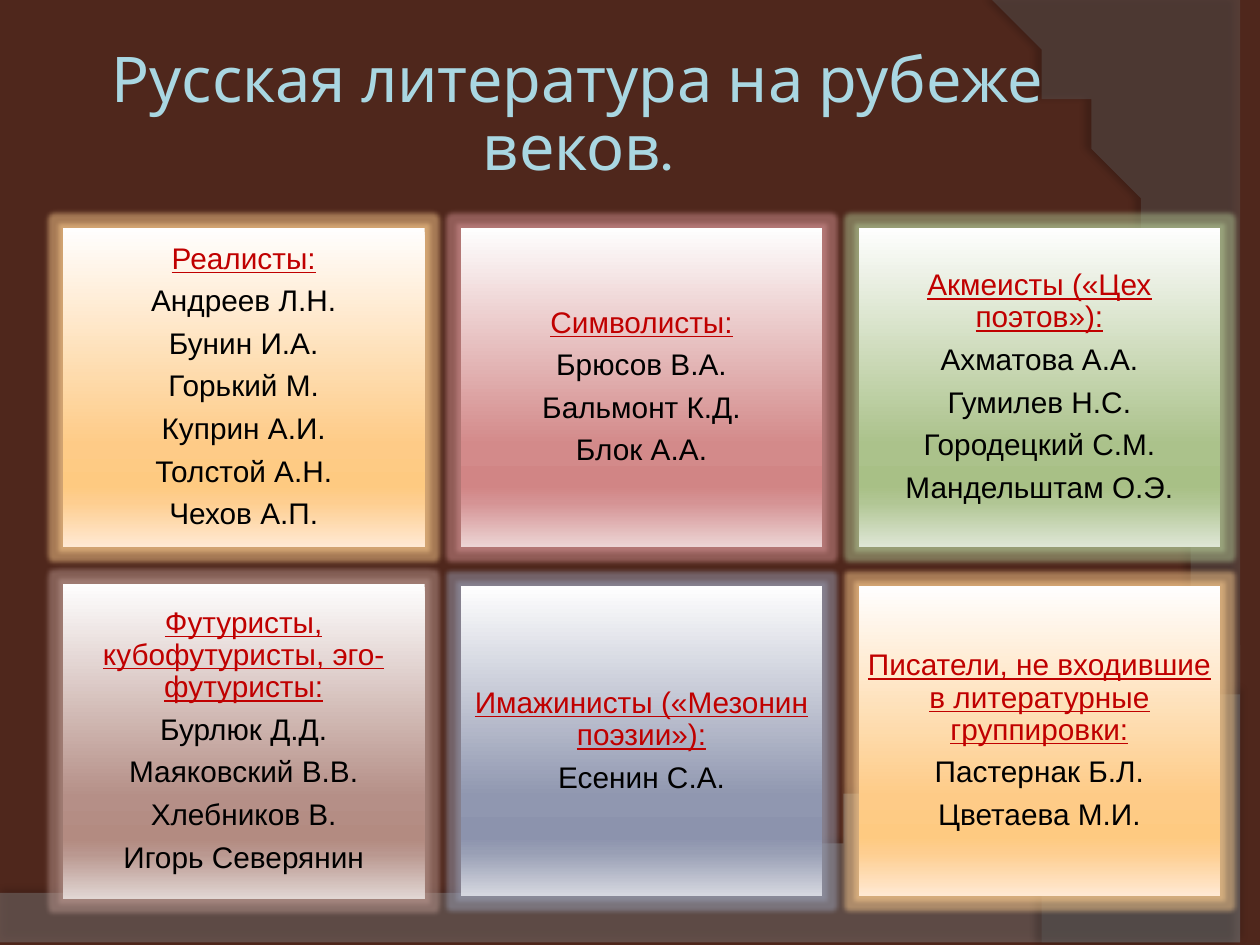
import pptx
import pptx.util
import pptx.oxml
import pptx.oxml.ns
import pptx.dml.color
import pptx.enum.shapes
import pptx.enum.text
from lxml import etree

Cm = pptx.util.Cm
Pt = pptx.util.Pt
RGBColor = pptx.dml.color.RGBColor
qn = pptx.oxml.ns.qn

BACKGROUND = RGBColor(0x4F, 0x27, 0x1C)
WAVE = RGBColor(0x7F, 0x7F, 0x7F)
SIDE = RGBColor(0x5E, 0x5E, 0x5E)
SHADOW = RGBColor(0, 0, 0)
TITLE = RGBColor(0xA9, 0xD7, 0xE2)
HEADING = RGBColor(0xC0, 0, 0)
NAME = RGBColor(0, 0, 0)

# Card gradients: one colour for each stop
STOPS = (0, 68, 81, 86, 100)


def shades(*codes):
    return [RGBColor.from_string(code) for code in codes]


ORANGE = shades("FFFEFE", "FECB87", "FECA81", "FECE90", "FFE9D3")
RED = shades("FEFEFE", "D38A8A", "D18585", "D59394", "ECD4D4")
GREEN = shades("FEFEFE", "ABC28B", "A8C086", "B1C694", "DEE6D5")
BROWN = shades("FEFEFE", "B58F87", "B38B81", "BA9890", "E1D6D3")
BLUE = shades("FEFEFE", "9097B0", "8C93AD", "999FB5", "D6D8E0")

# Grid in centimetres
LEFT, COLUMN_STEP, CARD_WIDTH = 1.27, 8.02, 7.29
ROW_CENTRES = (7.81, 14.94)

# Height, gradient, heading, names
CARDS = [
    (6.43, ORANGE, "Реалисты:",
     ["Андреев Л.Н.", "Бунин И.А.", "Горький М.", "Куприн А.И.",
      "Толстой А.Н.", "Чехов А.П."]),
    (6.43, RED, "Символисты:",
     ["Брюсов В.А.", "Бальмонт К.Д.", "Блок А.А."]),
    (6.43, GREEN, "Акмеисты («Цех поэтов»):",
     ["Ахматова А.А.", "Гумилев Н.С.", "Городецкий С.М.", "Мандельштам О.Э."]),
    (6.35, BROWN, "Футуристы, кубофутуристы, эго-футуристы:",
     ["Бурлюк Д.Д.", "Маяковский В.В.", "Хлебников В.", "Игорь Северянин"]),
    (6.25, BLUE, "Имажинисты («Мезонин поэзии»):", ["Есенин С.А."]),
    (6.25, ORANGE, "Писатели, не входившие в литературные группировки:",
     ["Пастернак Б.Л.", "Цветаева М.И."]),
]


def add_colour(parent, colour, alpha=100):
    element = etree.SubElement(parent, qn("a:srgbClr"), val=str(colour))
    if alpha < 100:
        etree.SubElement(element, qn("a:alpha"), val=str(alpha * 1000))


def add_effect(shape, tag, colour, alpha, **settings):
    shape.shadow.inherit = False
    effects = shape._element.spPr.find(qn("a:effectLst"))
    values = {key: str(value) for key, value in settings.items()}
    add_colour(etree.SubElement(effects, qn(tag), values), colour, alpha)


def curve(start, first, second, end, steps=40):
    """Points along a cubic curve, without its start."""
    points = []
    for step in range(1, steps + 1):
        t = step / steps
        weights = ((1 - t) ** 3, 3 * t * (1 - t) ** 2, 3 * t * t * (1 - t), t ** 3)
        points.append(tuple(sum(w * p for w, p in zip(weights, axis))
                            for axis in zip(start, first, second, end)))
    return points


def add_backdrop(slide, points, colour, alpha, shadow_alpha, distance, angle):
    builder = slide.shapes.build_freeform(*points[0], scale=Cm(1))
    builder.add_line_segments(points[1:], close=True)
    shape = builder.convert_to_shape()
    shape.fill.solid()
    shape.fill.fore_color.rgb = colour
    fill_colour = shape._element.spPr.find(qn("a:solidFill"))[0]
    etree.SubElement(fill_colour, qn("a:alpha"), val=str(alpha * 1000))
    shape.line.fill.background()
    add_effect(shape, "a:outerShdw", SHADOW, shadow_alpha, blurRad=Pt(4),
               dist=Pt(distance), dir=angle * 60000)


def add_text(para, text, font, size, colour, underline=False):
    para.alignment = pptx.enum.text.PP_ALIGN.CENTER
    para.line_spacing = 0.9
    span = para.add_run()
    span.text = text
    span.font.name = font
    span.font.size = Pt(size)
    span.font.color.rgb = colour
    span.font.underline = underline


def prepare_frame(frame, inset):
    frame.word_wrap = True
    frame.auto_size = pptx.enum.text.MSO_AUTO_SIZE.NONE
    frame.vertical_anchor = pptx.enum.text.MSO_ANCHOR.MIDDLE
    frame.margin_left = frame.margin_right = Cm(inset)
    frame.margin_top = frame.margin_bottom = Cm(inset)


def set_gradient(shape, colours):
    shape.fill.gradient()
    shape.fill.gradient_angle = 270
    stop_list = shape._element.spPr.find(qn("a:gradFill")).find(qn("a:gsLst"))
    for stop in list(stop_list):
        stop_list.remove(stop)
    for position, colour in zip(STOPS, colours):
        stop = etree.SubElement(stop_list, qn("a:gs"), pos=str(position * 1000))
        add_colour(stop, colour)


def add_card(slide, index, height, colours, heading, names):
    row, column = divmod(index, 3)
    box = slide.shapes.add_shape(
        pptx.enum.shapes.MSO_SHAPE.RECTANGLE,
        Cm(LEFT + column * COLUMN_STEP), Cm(ROW_CENTRES[row] - height / 2),
        Cm(CARD_WIDTH), Cm(height))
    set_gradient(box, colours)
    box.line.fill.background()
    add_effect(box, "a:glow", colours[3], 50, rad=Pt(5.5))
    frame = box.text_frame
    prepare_frame(frame, 0.18)
    for number, text in enumerate([heading] + names):
        para = frame.add_paragraph() if number else frame.paragraphs[0]
        para.space_after = Pt(6)
        add_text(para, text, "Arial", 17, NAME if number else HEADING,
                 underline=number == 0)


def add_title(slide, text):
    title = slide.shapes.title
    title.left, title.top = Cm(1.27), Cm(0.76)
    title.width, title.height = Cm(20.75), Cm(3.18)
    prepare_frame(title.text_frame, 0.13)
    add_text(title.text_frame.paragraphs[0], text, "Karla", 36, TITLE)
    # Keep the title above the backdrop
    slide.shapes._spTree.append(title._element)


def main():
    deck = pptx.Presentation()
    deck.slide_width, deck.slide_height = Cm(25.4), Cm(19.05)
    page = deck.slides.add_slide(deck.slide_layouts[5])
    page.background.fill.solid()
    page.background.fill.fore_color.rgb = BACKGROUND

    # Backdrop: bottom wave and right-hand arc
    wave = [(0, 17.91), (0, 19.08), (25.4, 19.08), (25.4, 13.21)]
    wave += curve(wave[-1], (14.2, 18.52), (9.93, 18.26), wave[0])
    add_backdrop(page, wave, WAVE, 45, 35, 3.5, 270)
    side = [(25.4, 0.05), (25.4, 19.05), (20.85, 19.05)]
    side += curve(side[-1], (23.75, 15.72), (25.86, 7.62), (20.32, 0))
    add_backdrop(page, side, SIDE, 40, 45, 4, 180)

    add_title(page, "Русская литература на рубеже веков.")

    # Literary groups
    for index, card in enumerate(CARDS):
        add_card(page, index, *card)

    deck.save("out.pptx")


if __name__ == "__main__":
    main()
